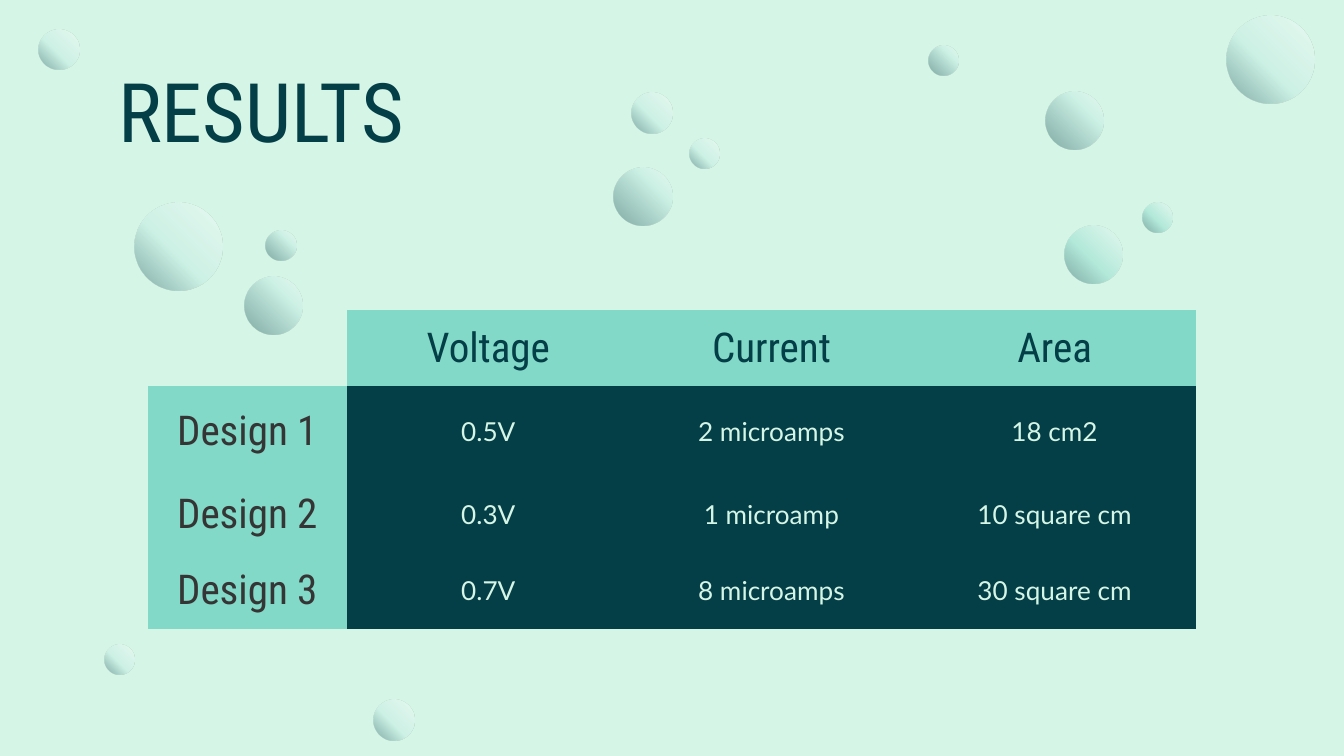
from lxml import etree
from pptx import Presentation
from pptx.dml.color import RGBColor
from pptx.enum.shapes import MSO_SHAPE
from pptx.enum.text import MSO_ANCHOR, PP_ALIGN
from pptx.oxml.ns import qn
from pptx.util import Pt

OVAL = MSO_SHAPE.OVAL
TOP, MIDDLE = MSO_ANCHOR.TOP, MSO_ANCHOR.MIDDLE
LEFT, CENTER = PP_ALIGN.LEFT, PP_ALIGN.CENTER
NO_STYLE_NO_GRID = "{2D5ABB26-0587-4C30-8999-92F81FD0307C}"

MINT, AQUA, TEAL, NAVY, GRAY = "D5F5E6", "C1ECE4", "82D9C8", "043E47", "353535"
HEADING_FONT, BODY_FONT = "Roboto Condensed", "Lato"
INSET = 7.2
SMALL, MEDIUM, LARGE, HUGE = 16, 21.6, 31, 47

BUBBLES = [
    (20.9, 15.8, MEDIUM, AQUA, 56),
    (200.2, 375.1, MEDIUM, AQUA, 56),
    (338.4, 49.7, MEDIUM, AQUA, 56),
    (142.6, 123.8, SMALL, AQUA, 31),
    (72, 108.7, HUGE, AQUA, 56),
    (369.4, 74.2, SMALL, AQUA, 56),
    (131, 148.3, LARGE, AQUA, 31),
    (570.2, 121, LARGE, TEAL, 56),
    (329, 90, LARGE, AQUA, 31),
    (56.2, 345.6, SMALL, AQUA, 56),
    (612, 108.7, SMALL, TEAL, 56),
    (497.5, 24.5, SMALL, AQUA, 31),
    (560.2, 49, LARGE, AQUA, 31),
    (657.4, 8.6, HUGE, AQUA, 56),
]

RESULTS = [
    ["", "Voltage", "Current", "Area"],
    ["Design 1", "0.5V", "2 microamps", "18 cm2"],
    ["Design 2", "0.3V", "1 microamp", "10 square cm"],
    ["Design 3", "0.7V", "8 microamps", "30 square cm"],
]


def color(value):
    return RGBColor.from_string(value)


def write(frame, text, font=HEADING_FONT, size=22, ink=NAVY, align=CENTER):
    paragraph = frame.paragraphs[0]
    paragraph.alignment = align
    run = paragraph.add_run()
    run.text = text
    run.font.name = font
    run.font.size = Pt(size)
    run.font.color.rgb = color(ink)


def inset(target):
    target.margin_left = target.margin_right = Pt(INSET)
    target.margin_top = target.margin_bottom = Pt(INSET)


class BubbleSlide:
    def __init__(self, presentation):
        self.slide = presentation.slides.add_slide(presentation.slide_layouts[6])
        self.slide.background.fill.solid()
        self.slide.background.fill.fore_color.rgb = color(MINT)
        self.opacity = 41

    def bubble(self, left, top, size, tint, middle):
        shape = self.slide.shapes.add_shape(OVAL, Pt(left), Pt(top), Pt(size), Pt(size))
        shape.shadow.inherit = False
        shape.line.fill.background()
        gradient = etree.Element(qn("a:gradFill"), rotWithShape="1")
        stops = etree.SubElement(gradient, qn("a:gsLst"))
        for position, value in ((0, "FFFFFF"), (middle, tint), (100, NAVY)):
            stop = etree.SubElement(stops, qn("a:gs"), pos=str(position * 1000))
            shade = etree.SubElement(stop, qn("a:srgbClr"), val=value)
            etree.SubElement(shade, qn("a:alpha"), val=str(self.opacity * 1000))
        circle = etree.SubElement(gradient, qn("a:path"), attrib={"path": "circle"})
        etree.SubElement(circle, qn("a:fillToRect"), l="100000", b="100000")
        shape.element.spPr.find(qn("a:prstGeom")).addnext(gradient)

    def title(self, text, left, top, width, height):
        box = self.slide.shapes.add_textbox(Pt(left), Pt(top), Pt(width), Pt(height))
        frame = box.text_frame
        frame.word_wrap = True
        frame.vertical_anchor = TOP
        inset(frame)
        write(frame, text, size=44, align=LEFT)

    def table(self, rows, left, top, widths, heights):
        frame = self.slide.shapes.add_table(
            len(rows), len(widths), Pt(left), Pt(top), Pt(sum(widths)), Pt(sum(heights))
        )
        table = frame.table
        table.first_row = table.horz_banding = False
        frame.element.find(".//" + qn("a:tableStyleId")).text = NO_STYLE_NO_GRID
        for column, width in zip(table.columns, widths):
            column.width = Pt(width)
        for row, height in zip(table.rows, heights):
            row.height = Pt(height)
        for row_index, row in enumerate(rows):
            for column_index, text in enumerate(row):
                self.cell(table.cell(row_index, column_index), text, row_index, column_index)

    def cell(self, cell, text, row_index, column_index):
        cell.vertical_anchor = MIDDLE
        inset(cell)
        if not text:
            cell.fill.background()
            return
        is_value = row_index > 0 and column_index > 0
        cell.fill.solid()
        cell.fill.fore_color.rgb = color(NAVY if is_value else TEAL)
        if is_value:
            write(cell.text_frame, text, font=BODY_FONT, size=14, ink=MINT)
        else:
            write(cell.text_frame, text, ink=NAVY if row_index == 0 else GRAY)


def main():
    presentation = Presentation()
    presentation.slide_width = Pt(720)
    presentation.slide_height = Pt(405)
    page = BubbleSlide(presentation)
    for bubble in BUBBLES:
        page.bubble(*bubble)
    page.title("RESULTS", 56.2, 25.2, 607.6, 54)
    page.table(RESULTS, 79.2, 166.2, [106.6] + [151.7] * 3, [32.4, 48.2, 36, 36])
    presentation.save("out.pptx")


if __name__ == "__main__":
    main()
